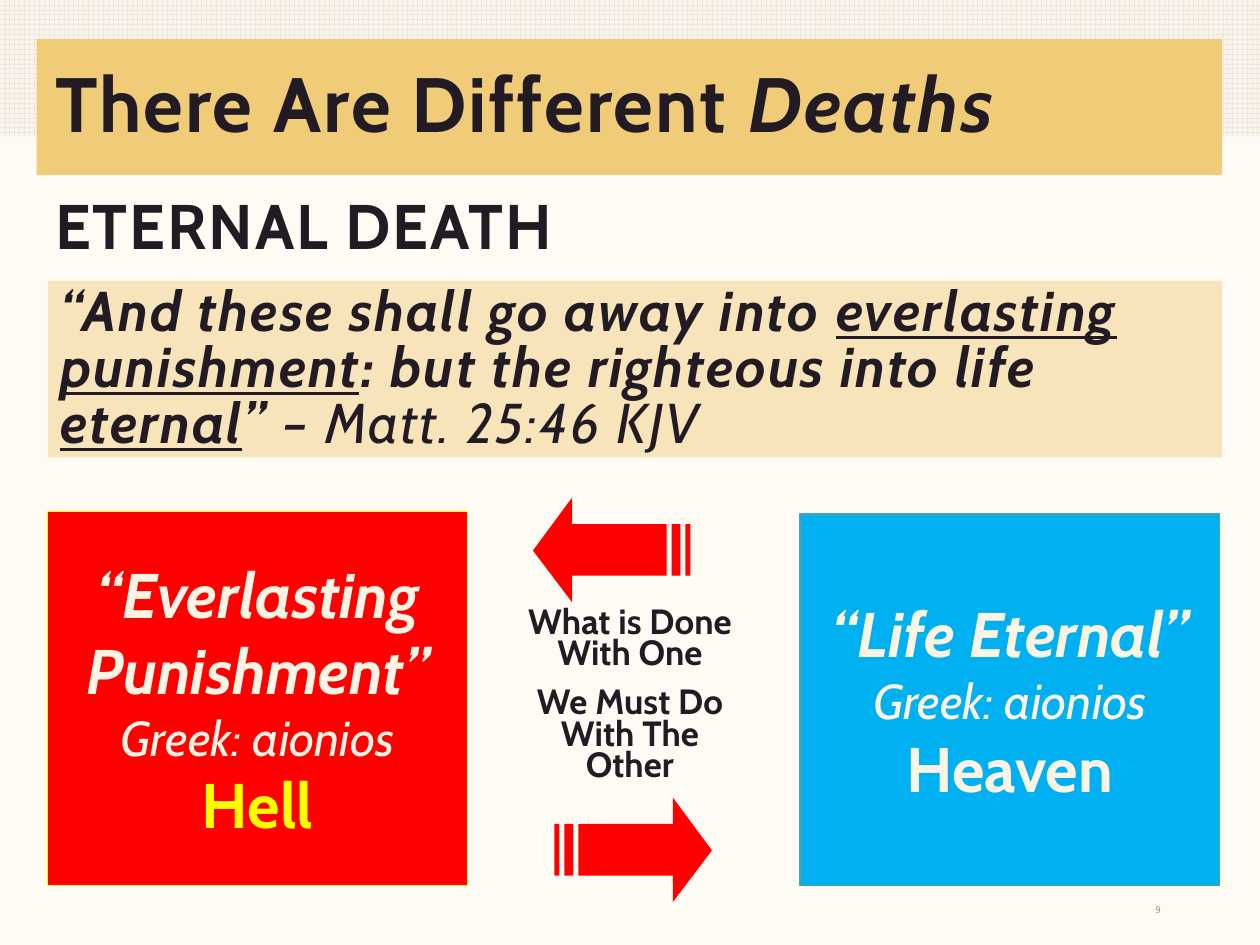
from pptx import Presentation
from pptx.dml.color import RGBColor
from pptx.enum import dml, shapes, text
from pptx.util import Inches, Pt

INK = RGBColor(0x23, 0x1B, 0x23)
CREAM = RGBColor(0xFC, 0xF5, 0xE5)
PAPER = RGBColor(0xFE, 0xFB, 0xF5)
GRID = RGBColor(0xEB, 0xE6, 0xEB)
GOLD = RGBColor(0xF0, 0xCC, 0x79)
SAND = RGBColor(0xF7, 0xE4, 0xBA)
RED = RGBColor(0xFF, 0x00, 0x00)
YELLOW = RGBColor(0xFF, 0xFF, 0x00)
BLUE = RGBColor(0x00, 0xB0, 0xF0)
TEAL = RGBColor(0x4D, 0xA1, 0xA8)
GREY = RGBColor(0x8D, 0x8D, 0x8D)
MID = text.MSO_ANCHOR.MIDDLE
TOP = text.MSO_ANCHOR.TOP
LEFT, MIDDLE, RIGHT = text.PP_ALIGN.LEFT, text.PP_ALIGN.CENTER, text.PP_ALIGN.RIGHT

prs = Presentation()
prs.slide_width, prs.slide_height = Inches(10), Inches(7.5)
slide = prs.slides.add_slide(prs.slide_layouts[6])
slide.background.fill.solid()
slide.background.fill.fore_color.rgb = PAPER


def add_box(at, fill=None, line=None):
    """Add a rectangle, or a plain text box when there is no fill."""
    at = [Inches(v) for v in at]
    if fill is None:
        return slide.shapes.add_textbox(*at)
    box = slide.shapes.add_shape(shapes.MSO_SHAPE.RECTANGLE, *at)
    box.shadow.inherit = False
    box.fill.solid()
    box.fill.fore_color.rgb = fill
    if line is None:
        box.line.fill.background()
    else:
        box.line.color.rgb = line
        box.line.width = Pt(0.75)
    return box


def write(box, paras, base, para, anchor=TOP, wrap=True, track=0):
    """Fill a box; each paragraph is a list of (words, format changes)."""
    frame = box.text_frame
    frame.word_wrap, frame.vertical_anchor = wrap, anchor
    for i, runs in enumerate(paras):
        p = frame.paragraphs[0] if i == 0 else frame.add_paragraph()
        for key, val in para.items():
            setattr(p, key, val)
        for words, change in runs:
            run = p.add_run()
            run.text = words
            look = {"name": "Cabin", "color": INK, "bold": True} | base | change
            run.font.color.rgb = look.pop("color")
            for key, val in look.items():
                setattr(run.font, key, val)
            if track:
                run.font._element.set("spc", str(track))


# Grid band and title bar
band = add_box((0, 0, 10, 1.08), CREAM)
band.fill.patterned()
band.fill.pattern = dml.MSO_PATTERN.LARGE_GRID
band.fill.fore_color.rgb = GRID
band.fill.back_color.rgb = CREAM
add_box((0.29, 0.31, 9.41, 1.08), GOLD)

# Title, heading and verse
write(add_box((0.34, 0.53, 9.36, 0.64)),
      [[("There Are Different ", {}), ("Deaths", {"italic": True})]],
      {"size": Pt(44)}, {"line_spacing": 0.9}, MID, track=110)
write(add_box((0.34, 1.59, 9.28, 0.6)), [[("ETERNAL DEATH", {})]],
      {"size": Pt(36)}, {"line_spacing": Pt(32), "space_before": Pt(12)}, track=110)
under = {"underline": True}
write(add_box((0.38, 2.23, 9.32, 1.4), SAND),
      [[("“And these shall go away into ", {}), ("everlasting punishment", under),
        (": but the righteous into life ", {}), ("eternal", under), ("” ", {}),
        ("– Matt. 25:46 KJV", {"bold": False})]],
      {"size": Pt(32), "italic": True},
      {"alignment": LEFT, "line_spacing": Pt(32), "space_before": Pt(11.2)}, track=110)

# Two destinies
greek = {"size": Pt(28), "bold": False}
cards = [
    ((0.38, 4.06, 3.33, 2.97), RED, YELLOW, ["“Everlasting", "Punishment”"], "Hell", YELLOW),
    ((6.35, 4.08, 3.33, 2.95), BLUE, TEAL, ["“Life Eternal”"], "Heaven", CREAM),
]
for at, fill, line, quote, place, hue in cards:
    paras = [[(words, {})] for words in quote]
    paras += [[("Greek: aionios", greek)], [(place, {"italic": False, "color": hue})]]
    write(add_box(at, fill, line), paras,
          {"size": Pt(36), "color": CREAM, "italic": True},
          {"alignment": MIDDLE}, MID, wrap=False)

# Striped arrows: tail end x, top y, direction
head = [(0.19, 0.21), (0.94, 0.21), (0.94, 0), (1.25, 0.42),
        (0.94, 0.83), (0.94, 0.62), (0.19, 0.62)]
bars = [[(a, 0.21), (b, 0.21), (b, 0.62), (a, 0.62)] for a, b in ((0, 0.04), (0.08, 0.15))]
for tail, top, way in ((5.48, 3.95, -1), (4.4, 6.33, 1)):
    pen = None
    for part in [head, *bars]:
        pts = [(Inches(tail + way * x), Inches(top + y)) for x, y in part]
        if pen is None:
            pen = slide.shapes.build_freeform(*pts[0])
        else:
            pen.move_to(*pts[0])
        pen.add_line_segments(pts[1:], close=True)
    arrow = pen.convert_to_shape()
    arrow.shadow.inherit = False
    arrow.fill.solid()
    arrow.fill.fore_color.rgb = RED
    arrow.line.fill.background()

# Words between the arrows; the gap is half of the 20 pt text
write(add_box((4.03, 4.79, 1.94, 1.54)),
      [[("What is Done With One", {})], [("We Must Do With The Other", {})]],
      {"size": Pt(20)},
      {"alignment": MIDDLE, "line_spacing": Pt(18), "space_before": Pt(10)})

# Slide number
write(add_box((7.06, 7.1, 2.25, 0.25)), [[("9", {})]],
      {"size": Pt(5.2), "name": "Noto Sans CJK JP", "color": GREY, "bold": False},
      {"alignment": RIGHT}, MID)

prs.save("out.pptx")
